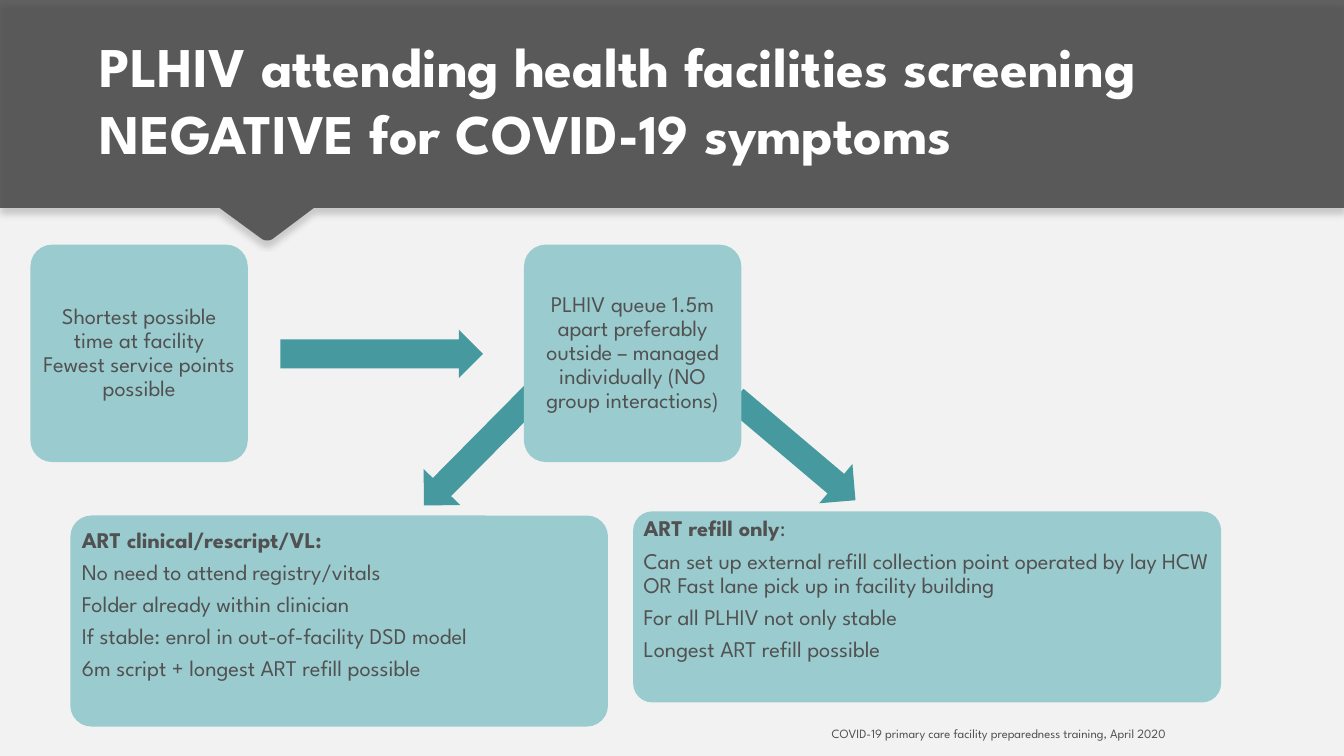
from lxml import etree
from pptx import Presentation
from pptx.dml.color import RGBColor
from pptx.enum.shapes import MSO_SHAPE
from pptx.enum.text import MSO_ANCHOR, MSO_AUTO_SIZE, PP_ALIGN
from pptx.oxml.ns import qn
from pptx.util import Emu, Pt

ROUND = MSO_SHAPE.ROUNDED_RECTANGLE
DOWN = MSO_SHAPE.DOWN_ARROW
RIGHT = MSO_SHAPE.RIGHT_ARROW
TOP, MID, BASE = MSO_ANCHOR.TOP, MSO_ANCHOR.MIDDLE, MSO_ANCHOR.BOTTOM
LEFT, CENTER, END = PP_ALIGN.LEFT, PP_ALIGN.CENTER, PP_ALIGN.RIGHT
FIXED = MSO_AUTO_SIZE.NONE
PX = 9525


class Theme:
    font = "League Spartan"
    back = RGBColor.from_string("F2F2F2")
    dark = RGBColor.from_string("3D3D3D")
    card = RGBColor.from_string("9ACBCE")
    arrow = RGBColor.from_string("45999F")
    ink = RGBColor.from_string("515151")
    white = RGBColor.from_string("FFFFFF")
    title, body, foot = Pt(40), Pt(16), Pt(9)
    gap = Pt(5.6)


def assign(item, values):
    for key, value in values.items():
        setattr(item, key, value)


def scale(box):
    return [Emu(n * PX) for n in box]


def shadow(alpha, blur, dist, angle, color):
    box = etree.Element(qn("a:effectLst"))
    cast = etree.SubElement(
        box, qn("a:outerShdw"), blurRad=str(Pt(blur)), dist=str(Pt(dist)),
        dir=str(angle * 60000), algn="tl", rotWithShape="0")
    tint = etree.SubElement(cast, qn("a:srgbClr"), val=str(color))
    etree.SubElement(tint, qn("a:alpha"), val=str(alpha * 1000))
    return box


class Deck:
    def __init__(self, theme):
        self.theme = theme
        self.file = Presentation()
        width, height = scale((1280, 720))
        assign(self.file, {"slide_width": width, "slide_height": height})
        self.slide = self.file.slides.add_slide(self.file.slide_layouts[3])
        self.shapes = self.slide.shapes
        fill = self.slide.background.fill
        fill.solid()
        fill.fore_color.rgb = theme.back

    def paint(self, shape, color):
        shape.shadow.inherit = False
        shape.fill.solid()
        shape.fill.fore_color.rgb = color
        shape.line.fill.background()

    def banner(self, points, alpha):
        build = self.shapes.build_freeform(*points[0], scale=PX)
        build.add_line_segments(points[1:], close=True)
        shape = build.convert_to_shape()
        self.paint(shape, self.theme.dark)
        props = shape.element.spPr
        tint = props.find(".//" + qn("a:srgbClr"))
        etree.SubElement(tint, qn("a:alpha"), val=str(alpha * 1000))
        props.replace(props.find(qn("a:effectLst")),
                      shadow(27, 4, 4, 90, self.theme.dark))

    def block(self, kind, box, color, turn=0, adjust=()):
        shape = self.shapes.add_shape(kind, *scale(box))
        self.paint(shape, color)
        shape.rotation = turn
        for i, value in enumerate(adjust):
            shape.adjustments[i] = value
        return shape

    def arrow(self, kind, box, turn=0, adjust=()):
        self.block(kind, box, self.theme.arrow, turn, adjust)

    def card(self, box):
        return self.block(ROUND, box, self.theme.card, adjust=[0.1])

    def place(self, holder, box):
        sides = ("left", "top", "width", "height")
        assign(holder, dict(zip(sides, scale(box))))
        node = holder.element
        node.getparent().append(node)

    def text(self, shape, lines, size, color, align=LEFT, anchor=MID,
             pads=(10, 5, 10, 5), lead=1.0, gap=Pt(0)):
        frame = shape.text_frame
        sides = ("margin_left", "margin_top", "margin_right", "margin_bottom")
        assign(frame, {"word_wrap": True, "auto_size": FIXED,
                       "vertical_anchor": anchor, **dict(zip(sides, scale(pads)))})
        for i, (bold, plain) in enumerate(lines):
            para = frame.paragraphs[0] if i == 0 else frame.add_paragraph()
            assign(para, {"alignment": align, "line_spacing": lead,
                          "space_before": Pt(0), "space_after": gap})
            for part, heavy in ((bold, True), (plain, False)):
                if part:
                    run = para.add_run()
                    run.text = part
                    assign(run.font, {"name": self.theme.font, "size": size,
                                      "bold": heavy})
                    run.font.color.rgb = color

    def title(self, text, box):
        holder = self.shapes.title
        self.place(holder, box)
        self.text(holder, [(text, "")], self.theme.title, self.theme.white,
                  anchor=BASE)
        fill = holder.element.find(".//" + qn("a:rPr")).find(qn("a:solidFill"))
        fill.addnext(shadow(60, 3, 3, 45, self.theme.dark))

    def footer(self, text, box):
        shape = self.shapes.add_textbox(*scale(box))
        self.text(shape, [("", text)], self.theme.foot, self.theme.ink,
                  align=END, anchor=BASE)

    def note(self, lines, box, pad):
        self.text(self.card(box), [("", line) for line in lines],
                  self.theme.body, self.theme.ink, align=CENTER,
                  pads=(pad,) * 4, lead=0.9)

    def list(self, slot, head, lines, box, inset, drop):
        self.card(box)
        x, y, w, h = box
        holder = self.slide.placeholders[slot]
        self.place(holder, (x + inset, y + inset, w - 2 * inset, h - 2 * inset))
        self.text(holder, [head] + [("", line) for line in lines],
                  self.theme.body, self.theme.ink, anchor=TOP,
                  pads=(5, drop, 5, 0), lead=0.9, gap=self.theme.gap)
        for props in holder.element.iter(qn("a:pPr")):
            props.set("marL", "0")
            props.set("indent", "0")
            etree.SubElement(props, qn("a:buNone"))


def main():
    deck = Deck(Theme())
    deck.banner([(0, 0), (1280, 0), (1280, 198), (299, 198), (259, 228),
                 (256, 229), (253, 229), (250, 228), (209, 198), (0, 198)], 80)
    deck.arrow(DOWN, (432, 353, 49, 150), 44.7)
    deck.title("PLHIV attending health facilities screening "
               "NEGATIVE for COVID-19 symptoms", (85, 61, 1110, 102))
    deck.footer("COVID-19 primary care facility preparedness training, "
                "April 2020", (213, 673, 907, 38))
    deck.arrow(DOWN, (733, 353, 49, 150), 310.2)
    deck.note(["Shortest possible time at facility",
               "Fewest service points possible"], (29, 233, 207, 207), 5)
    deck.arrow(RIGHT, (267, 314, 193, 46), adjust=[0.6, 0.5])
    deck.note(["PLHIV queue 1.5m apart preferably outside – managed "
               "individually (NO group interactions)"], (499, 233, 207, 207), 7)
    deck.list(2, ("ART refill only", ":"), [
        "Can set up external refill collection point operated by lay HCW "
        "OR Fast lane pick up in facility building",
        "For all PLHIV not only stable",
        "Longest ART refill possible",
    ], (603, 487, 560, 182), 5, 1)
    deck.list(1, ("ART clinical/rescript/VL:", ""), [
        "No need to attend registry/vitals",
        "Folder already within clinician",
        "If stable: enrol in out-of-facility DSD model",
        "6m script + longest ART refill possible",
    ], (67, 491, 512, 201), 6, 7)
    deck.file.save("out.pptx")


if __name__ == "__main__":
    main()
